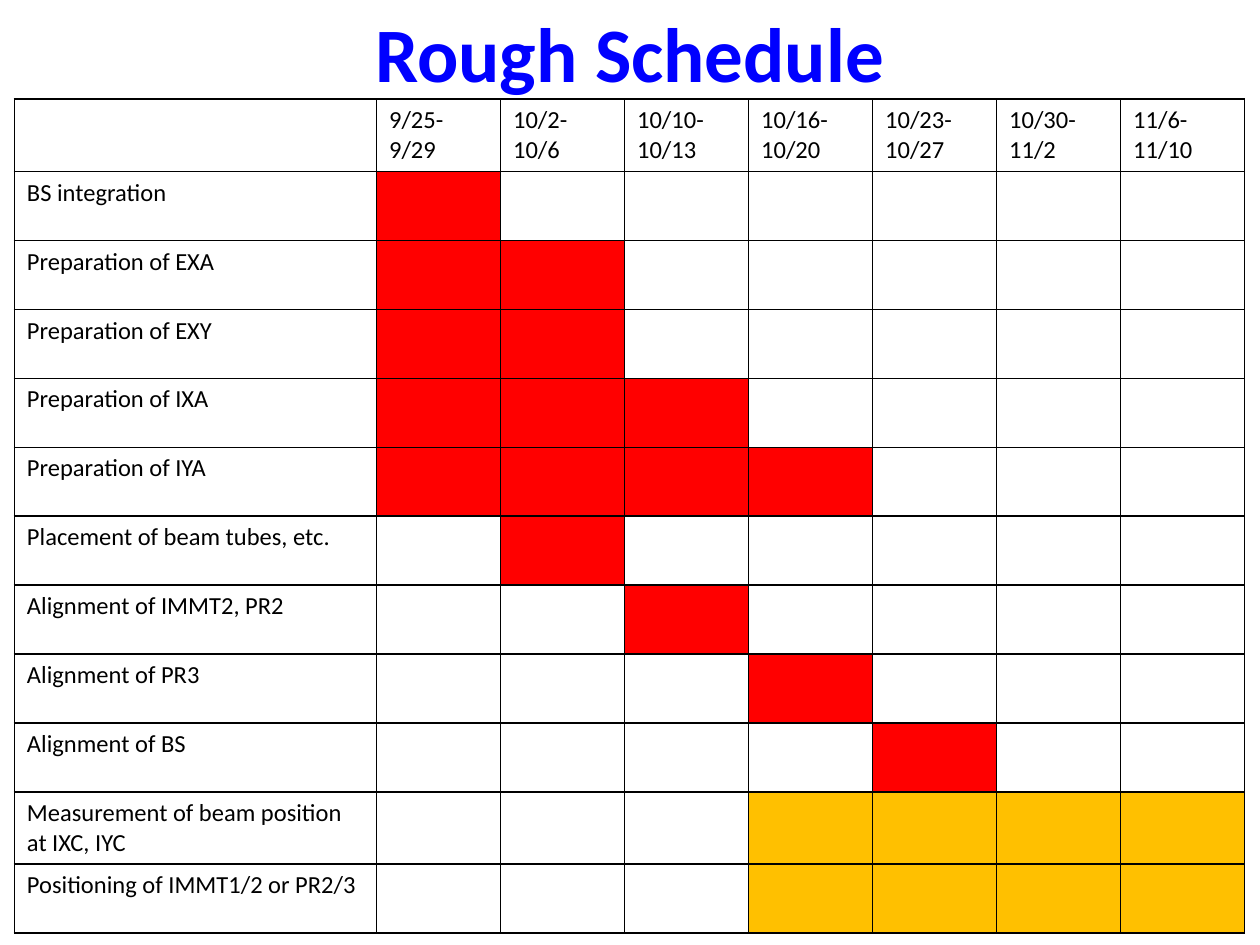
from lxml.etree import SubElement
from pptx import Presentation
from pptx.dml.color import RGBColor
from pptx.enum.text import MSO_ANCHOR, PP_ALIGN
from pptx.oxml.ns import qn
from pptx.util import Cm, Pt

FONT = "Calibri"
RED, GOLD = "FF0000", "FFC000"
WEEKS = ["9/25-9/29", "10/2-10/6", "10/10-10/13", "10/16-10/20",
         "10/23-10/27", "10/30-11/2", "11/6-11/10"]
# Task, first week, last week, bar colour
TASKS = [
    ("BS integration", 1, 1, RED),
    ("Preparation of EXA", 1, 2, RED),
    ("Preparation of EXY", 1, 2, RED),
    ("Preparation of IXA", 1, 3, RED),
    ("Preparation of IYA", 1, 4, RED),
    ("Placement of beam tubes, etc.", 2, 2, RED),
    ("Alignment of IMMT2, PR2", 3, 3, RED),
    ("Alignment of PR3", 4, 4, RED),
    ("Alignment of BS", 5, 5, RED),
    ("Measurement of beam position at IXC, IYC", 4, 7, GOLD),
    ("Positioning of IMMT1/2 or PR2/3", 4, 7, GOLD),
]


def color(code):
    return RGBColor.from_string(code)


def style(para, size, code, bold=False):
    font = para.font
    for run in para.runs:
        font = run.font
    font.name, font.size, font.bold = FONT, Pt(size), bold
    font.color.rgb = color(code)


def border(cell):
    props = cell._tc.get_or_add_tcPr()
    for spot, side in enumerate(("a:lnL", "a:lnR", "a:lnT", "a:lnB")):
        line = SubElement(props, qn(side), w=str(Pt(1)))
        fill = SubElement(line, qn("a:solidFill"))
        SubElement(fill, qn("a:srgbClr"), val="000000")
        # Borders must come before the cell fill
        props.insert(spot, line)


def add_title(slide, left, top, width, height):
    frame = slide.shapes.add_textbox(left, top, width, height).text_frame
    frame.word_wrap = True
    frame.vertical_anchor = MSO_ANCHOR.MIDDLE
    frame.text = "Rough Schedule"
    para = frame.paragraphs[0]
    para.alignment = PP_ALIGN.CENTER
    para.line_spacing = 0.9
    style(para, 44, "0000FF", True)


def add_plan(slide, left, top, width, height):
    rows, cols = len(TASKS) + 1, len(WEEKS) + 1
    table = slide.shapes.add_table(rows, cols, left, top, width, height).table
    table.first_row = table.horz_banding = False

    # One wide task column, equal week columns
    week = Cm(2.5)
    for col in table.columns:
        col.width = week
    table.columns[0].width = width - week * len(WEEKS)

    # Rows with two lines of text are taller
    for row in table.rows:
        row.height = Cm(1.39)
    for tall in (0, 10):
        table.rows[tall].height = Cm(1.46)

    # Labels
    for col, name in enumerate(WEEKS, 1):
        table.cell(0, col).text = name
    for row, task in enumerate(TASKS, 1):
        table.cell(row, 0).text = task[0]

    # Plain bordered grid
    for cell in table.iter_cells():
        cell.fill.background()
        border(cell)
        style(cell.text_frame.paragraphs[0], 14, "000000")

    # Schedule bars
    for row, (_, first, last, code) in enumerate(TASKS, 1):
        for col in range(first, last + 1):
            fill = table.cell(row, col).fill
            fill.solid()
            fill.fore_color.rgb = color(code)


def main():
    deck = Presentation()
    deck.slide_width, deck.slide_height = Cm(25.4), Cm(19.05)
    slide = deck.slides.add_slide(deck.slide_layouts[6])
    add_title(slide, Cm(1.75), Cm(0), Cm(21.9), Cm(2.31))
    add_plan(slide, Cm(0.29), Cm(2), Cm(24.8), Cm(16.82))
    deck.save("out.pptx")


if __name__ == "__main__":
    main()
